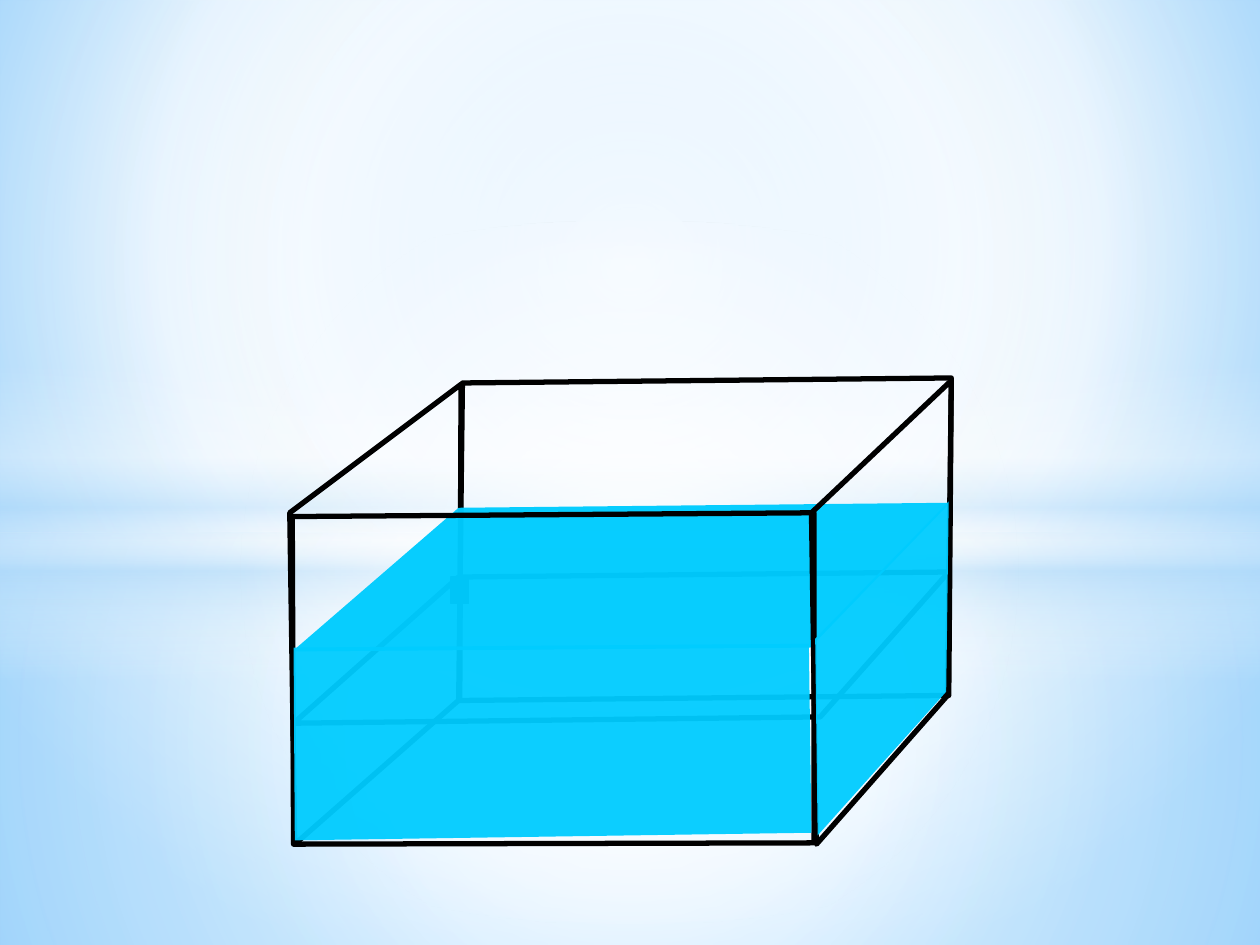
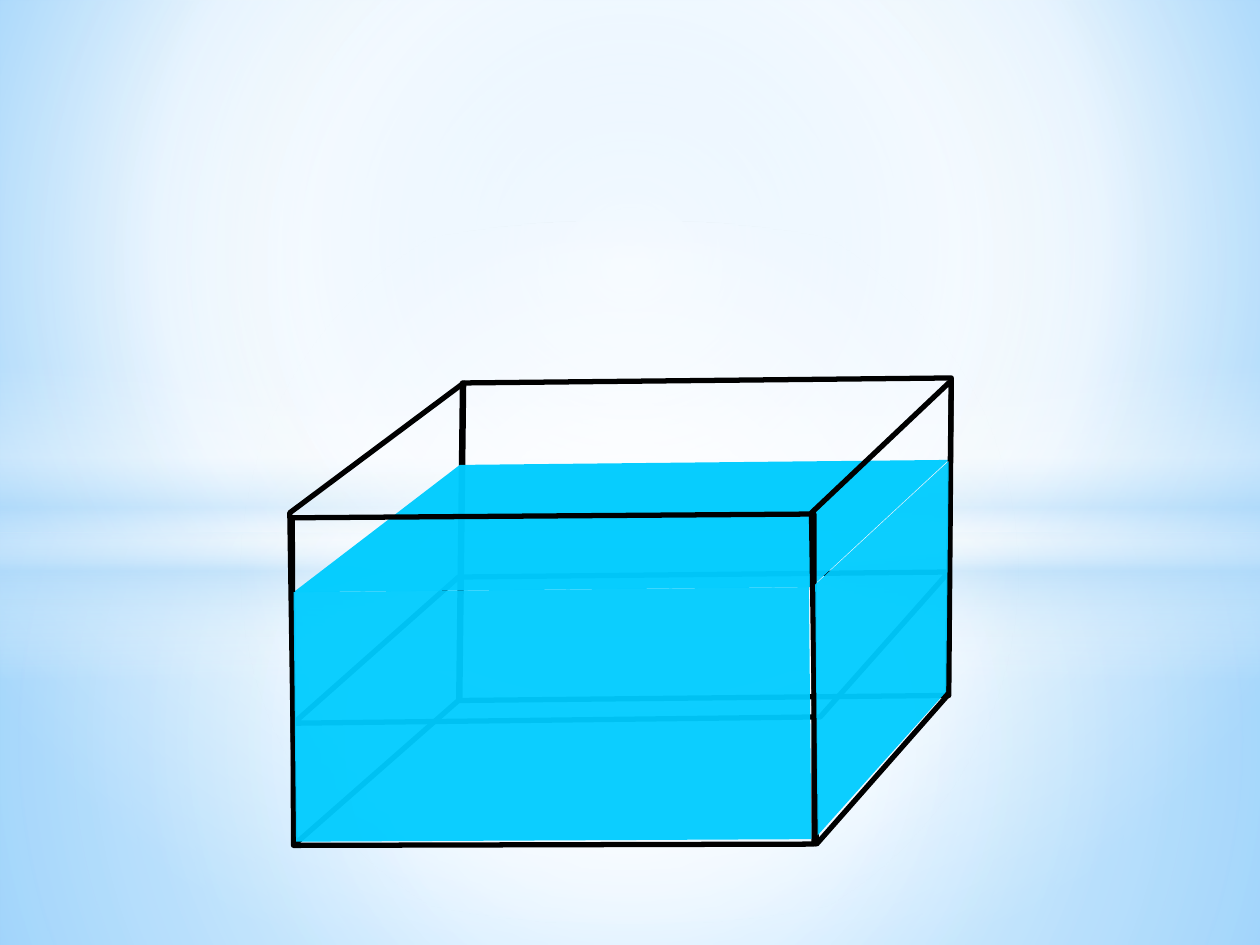
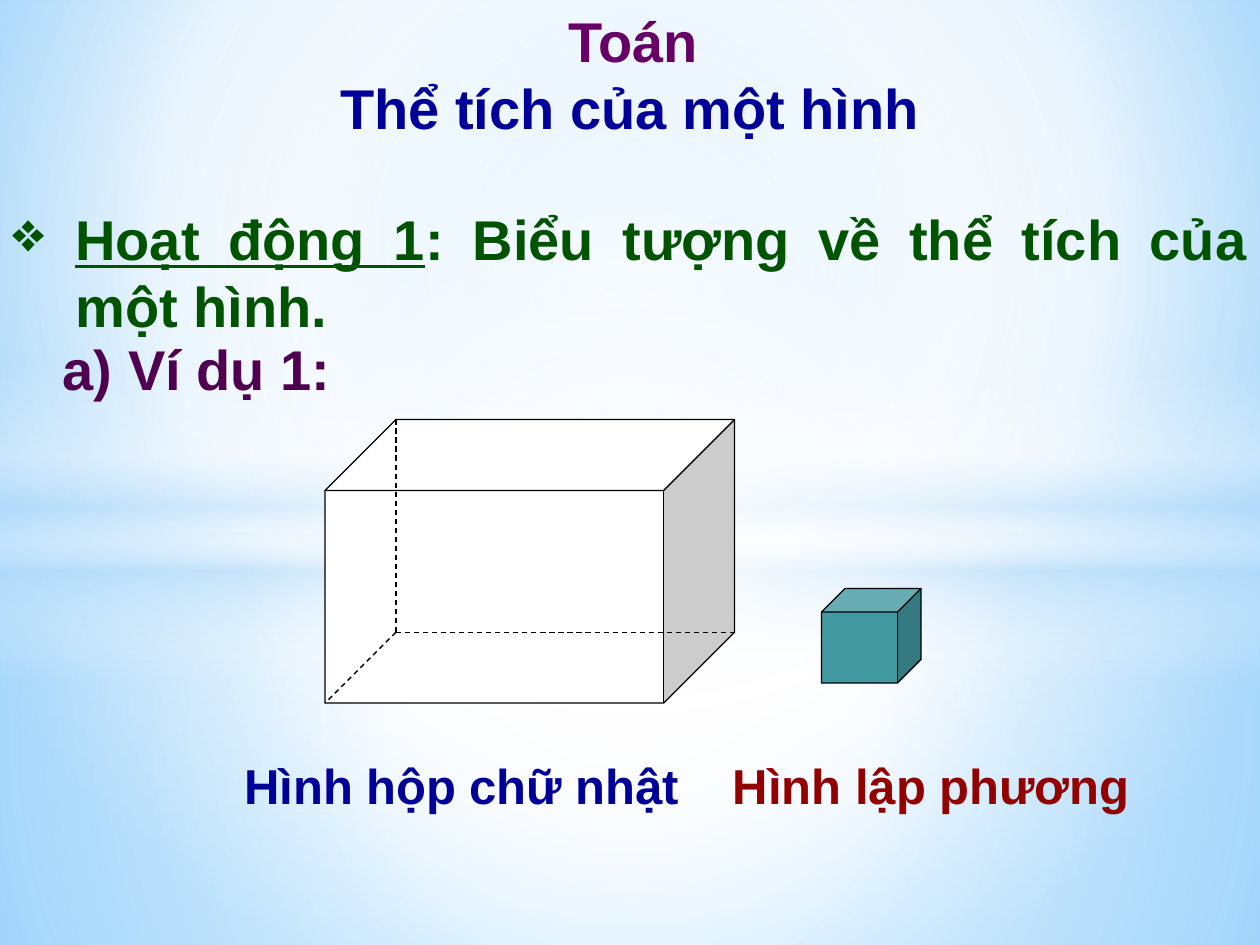
from dataclasses import dataclass
from typing import NamedTuple

from lxml.etree import Element, SubElement
from pptx import Presentation
from pptx.dml.color import RGBColor
from pptx.enum.dml import MSO_LINE
from pptx.enum.shapes import MSO_CONNECTOR, MSO_SHAPE
from pptx.enum.text import MSO_ANCHOR, MSO_AUTO_SIZE, PP_ALIGN
from pptx.oxml.ns import qn
from pptx.util import Inches, Pt

COLORS = {
    "sky": "9ED5FF", "deep_sky": "5BB9FF", "haze": "B4DCFA", "white": "FFFFFF",
    "black": "000000", "water": "00CCFF", "teal": "4299A0", "purple": "660066",
    "plum": "500050", "navy": "000099", "red": "920000", "green": "005400",
}
FONT = "Arial"
CENTER = (50, 50, 50, 50)

Point = tuple[float, float]
Box = tuple[float, float, float, float]


class Stop(NamedTuple):
    pos: int
    color: str
    alpha: int = 100


class Band(NamedTuple):
    shape: MSO_SHAPE
    box: Box
    stops: list[Stop]
    focus: Box | None = CENTER


class Face(NamedTuple):
    points: list[Point]
    alpha: int | None = None


class Span(NamedTuple):
    text: str
    color: str
    underline: bool | None = None


@dataclass
class Para:
    spans: list[Span]
    size: int = 32
    align: PP_ALIGN | None = PP_ALIGN.CENTER
    left: float = 0
    indent: float = 0
    bullet: str = ""


@dataclass
class Label:
    box: Box
    para: Para
    wrap: bool = True


BACKDROP = [Stop(0, "sky"), Stop(60, "white"), Stop(100, "deep_sky")]
BANDS = [
    Band(MSO_SHAPE.RECTANGLE, (0, 4.23, 10, 3.27),
         [Stop(0, "white", 91), Stop(37, "white", 76), Stop(100, "haze", 79)]),
    Band(MSO_SHAPE.RECTANGLE, (0, 0, 10, 4.23),
         [Stop(0, "white", 89), Stop(48, "white", 62), Stop(100, "haze", 79)]),
    Band(MSO_SHAPE.RECTANGLE, (0, 2.9, 10, 2.5),
         [Stop(0, "white", 0), Stop(29, "white", 30), Stop(45, "haze", 40),
          Stop(55, "white", 26), Stop(65, "haze", 60), Stop(100, "white", 0)], None),
    Band(MSO_SHAPE.OVAL, (0, 1.75, 10, 5.58), [Stop(0, "white"), Stop(54, "white", 0)]),
]

BACK = Face([(3.64, 5.56), (7.53, 5.52), (7.55, 3), (3.67, 3.04)])
SHELF = Face([(2.33, 5.74), (3.64, 4.58), (7.53, 4.54), (6.51, 5.69)])
RIGHT = Face([(6.44, 4.07), (7.55, 3.02), (7.52, 5.52), (6.48, 6.7)])


def tank_faces(left_top: Point, front_drop: float, surface: list[Point],
               water_front: list[Point], water_side: list[Point]) -> list[Face]:
    front = [(2.33, 6.7), (6.46, 6.69), (6.46, 4.07), (2.32, 4.1)]
    return [
        Face([(2.3, 4.07), left_top, (3.65, 5.55), (2.34, 6.7)]),
        BACK,
        SHELF,
        Face(surface, 97),
        Face([(x, y + front_drop) for x, y in front]),
        RIGHT,
        Face(water_front, 95),
        Face(water_side + [(6.49, 6.63), (7.51, 5.49)], 95),
    ]


LOW_TANK = tank_faces(
    (3.66, 3.05), 0,
    [(2.32, 5.17), (3.64, 4.03), (7.54, 3.99), (6.43, 5.14)],
    [(2.33, 5.14), (6.42, 5.11), (6.44, 6.61), (2.34, 6.67)],
    [(7.53, 3.98), (6.47, 5.07)])
HIGH_TANK = tank_faces(
    (3.68, 3.04), 0.01,
    [(2.33, 4.7), (3.65, 3.69), (7.53, 3.65), (6.44, 4.66)],
    [(2.33, 4.7), (6.42, 4.66), (6.44, 6.66), (2.35, 6.68)],
    [(7.53, 3.66), (6.47, 4.64)])

TITLE = [
    Para([Span("Toán", "purple")], left=0.05),
    Para([Span("Thể tích của một hình", "navy")], left=0.38, indent=-0.38),
]
LABELS = [
    Label((0, 2.61, 2.86, 0.64),
          Para([Span("a) Ví dụ 1:", "plum")], align=None, indent=0.4)),
    Label((1.83, 5.95, 3.67, 0.57), Para([Span("Hình hộp chữ nhật", "navy")], 28)),
    Label((5.7, 5.95, 3.38, 0.57), Para([Span("Hình lập phương", "red")], 28), False),
    Label((0, 1.57, 10, 1.18),
          Para([Span("Hoạt động 1", "green", True),
                Span(": Biểu tượng về thể tích của một hình.", "green")],
               align=PP_ALIGN.JUSTIFY, left=0.5, indent=-0.5, bullet="❖")),
]


def rgb(name: str) -> RGBColor:
    return RGBColor.from_string(COLORS[name])


def inches(box: Box) -> list[int]:
    return [Inches(v) for v in box]


def set_gradient(element, stops: list[Stop], focus: Box | None) -> None:
    solid = element.find(".//" + qn("a:solidFill"))
    grad = Element(qn("a:gradFill"), rotWithShape="1")
    stop_list = SubElement(grad, qn("a:gsLst"))
    for stop in stops:
        gs = SubElement(stop_list, qn("a:gs"), pos=str(stop.pos * 1000))
        color = SubElement(gs, qn("a:srgbClr"), val=COLORS[stop.color])
        if stop.alpha < 100:
            SubElement(color, qn("a:alpha"), val=str(stop.alpha * 1000))
    if focus:
        route = SubElement(grad, qn("a:path"), path="circle")
        edges = {k: str(v * 1000) for k, v in zip("ltrb", focus)}
        SubElement(route, qn("a:fillToRect"), edges)
    else:
        SubElement(grad, qn("a:lin"), ang="5400000", scaled="0")
    solid.getparent().replace(solid, grad)


def add_solid(shapes, kind: MSO_SHAPE, box: Box, fill: str, line: str | None = None):
    sp = shapes.add_shape(kind, *inches(box))
    sp.shadow.inherit = False
    sp.fill.solid()
    sp.fill.fore_color.rgb = rgb(fill)
    if line:
        sp.line.color.rgb = rgb(line)
        sp.line.width = Pt(0.75)
    else:
        sp.line.fill.background()
    return sp


def style_master(prs, s) -> None:
    master = prs.slide_master
    master.background.fill.solid()
    set_gradient(master.element, BACKDROP, (20, 10, 20, 60))
    for i, band in enumerate(BANDS):
        sp = add_solid(s.shapes, band.shape, band.box, "white")
        set_gradient(sp._element, band.stops, band.focus)
        sp._element.nvSpPr.cNvPr.set("id", str(20 + i))
        master.shapes._spTree.insert(2 + i, sp._element)


def add_face(s, face: Face) -> None:
    start, *rest = [(Inches(x), Inches(y)) for x, y in face.points]
    builder = s.shapes.build_freeform(*start)
    builder.add_line_segments(rest, close=True)
    sp = builder.convert_to_shape()
    sp.shadow.inherit = False
    if face.alpha is None:
        sp.fill.background()
        sp.line.color.rgb = rgb("black")
        sp.line.width = Pt(3)
    else:
        sp.fill.solid()
        sp.fill.fore_color.rgb = rgb("water")
        color = sp._element.find(".//" + qn("a:srgbClr"))
        SubElement(color, qn("a:alpha"), val=str(face.alpha * 1000))
        sp.line.fill.background()


def add_tank(s, faces: list[Face]) -> None:
    for face in faces:
        add_face(s, face)


def add_hidden_edge(shapes, start: Point, end: Point) -> None:
    edge = shapes.add_connector(MSO_CONNECTOR.STRAIGHT, *inches(start + end))
    edge.line.color.rgb = rgb("black")
    edge.line.width = Pt(0.75)
    edge.line.dash_style = MSO_LINE.DASH
    SubElement(edge._element.spPr, qn("a:effectLst"))


def add_cuboid(s, box: Box) -> None:
    x, y, w, h = box
    depth = h / 4
    corner = (x + depth, y + h - depth)
    group = s.shapes.add_group_shape()
    add_solid(group.shapes, MSO_SHAPE.CUBE, box, "white", "black")
    for end in [(corner[0], y), (x + w, corner[1]), (x, y + h)]:
        add_hidden_edge(group.shapes, corner, end)


def write_para(p, para: Para) -> None:
    p.alignment = para.align
    props = p._p.get_or_add_pPr()
    props.set("marL", str(Inches(para.left)))
    props.set("indent", str(Inches(para.indent)))
    if para.bullet:
        SubElement(props, qn("a:buChar"), char=para.bullet)
    for span in para.spans:
        r = p.add_run()
        r.text = span.text
        r.font.name = FONT
        r.font.size = Pt(para.size)
        r.font.bold = True
        r.font.underline = span.underline
        r.font.color.rgb = rgb(span.color)


def add_label(s, label: Label) -> None:
    tf = s.shapes.add_textbox(*inches(label.box)).text_frame
    tf.word_wrap = label.wrap
    tf.auto_size = MSO_AUTO_SIZE.SHAPE_TO_FIT_TEXT
    write_para(tf.paragraphs[0], label.para)


def set_title(s, paras: list[Para]) -> None:
    sp = s.shapes.title
    sp.left, sp.top, sp.width, sp.height = inches((0, 0, 10, 1.9))
    tf = sp.text_frame
    tf.vertical_anchor = MSO_ANCHOR.TOP
    tf.auto_size = MSO_AUTO_SIZE.NONE
    for i, para in enumerate(paras):
        write_para(tf.add_paragraph() if i else tf.paragraphs[0], para)


def main() -> None:
    prs = Presentation()
    prs.slide_width, prs.slide_height = Inches(10), Inches(7.5)
    title_only, blank = prs.slide_layouts[5], prs.slide_layouts[6]

    s = prs.slides.add_slide(blank)
    style_master(prs, s)
    add_solid(s.shapes, MSO_SHAPE.RECTANGLE, (3.58, 4.58, 0.14, 0.21), "black", "black")
    add_tank(s, LOW_TANK)

    s = prs.slides.add_slide(blank)
    add_tank(s, HIGH_TANK)

    s = prs.slides.add_slide(title_only)
    set_title(s, TITLE)
    add_cuboid(s, (2.58, 3.33, 3.25, 2.25))
    add_solid(s.shapes, MSO_SHAPE.CUBE, (6.52, 4.67, 0.79, 0.75), "teal", "black")
    for label in LABELS:
        add_label(s, label)

    prs.save("out.pptx")


if __name__ == "__main__":
    main()
